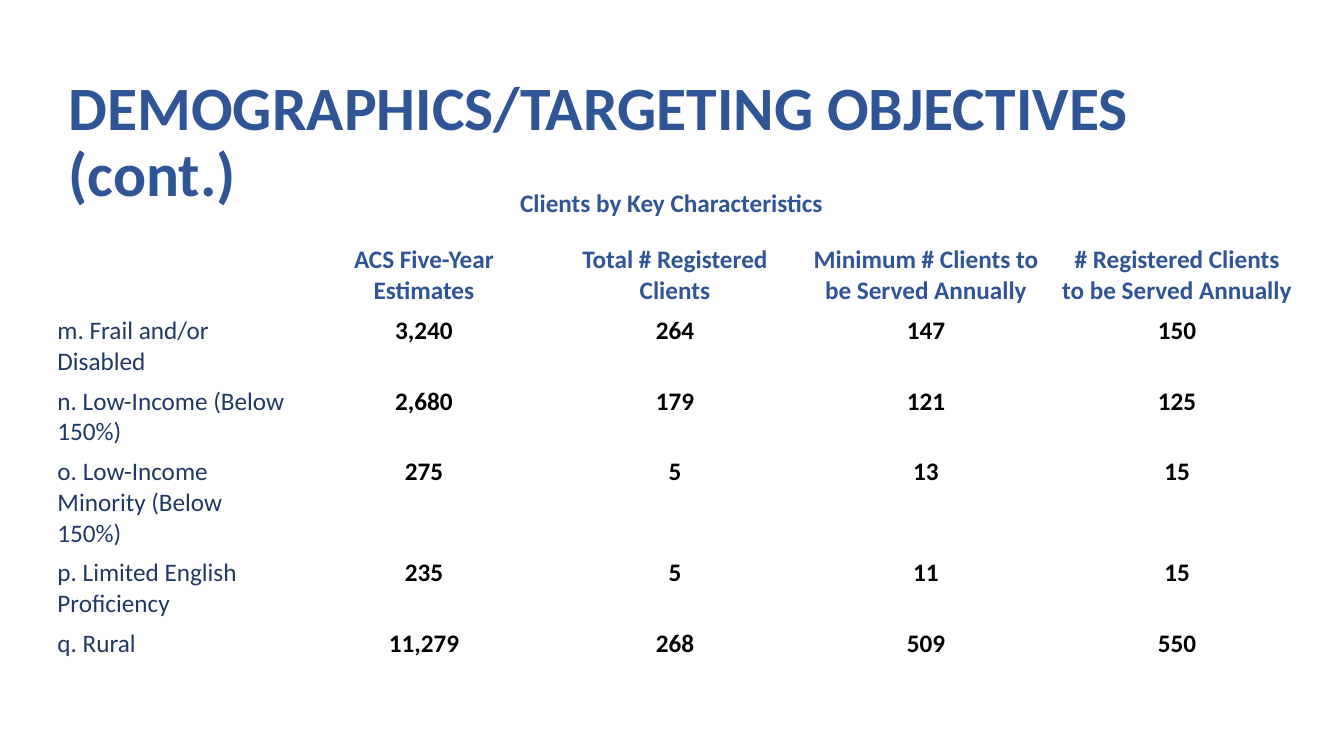
from dataclasses import dataclass

from pptx import Presentation
from pptx.dml.color import RGBColor
from pptx.enum.text import MSO_ANCHOR, MSO_AUTO_SIZE, PP_ALIGN
from pptx.util import Emu, Pt

EMU_PER_PX = 9144  # 100 px to the inch


@dataclass(frozen=True)
class Theme:
    font: str = "Calibri"
    heading: RGBColor = RGBColor(0x2F, 0x55, 0x97)
    label: RGBColor = RGBColor(0x20, 0x38, 0x64)
    value: RGBColor = RGBColor(0, 0, 0)
    title_size: int = 44
    text_size: int = 18


HEADERS = ["", "ACS Five-Year Estimates", "Total # Registered Clients",
           "Minimum # Clients to be Served Annually",
           "# Registered Clients to be Served Annually"]
CLIENT_GROUPS = [
    ["m. Frail and/or Disabled", "3,240", "264", "147", "150"],
    ["n. Low-Income (Below 150%)", "2,680", "179", "121", "125"],
    ["o. Low-Income Minority (Below 150%)", "275", "5", "13", "15"],
    ["p. Limited English Proficiency", "235", "5", "11", "15"],
    ["q. Rural", "11,279", "268", "509", "550"],
]


def px(*lengths):
    return [Emu(length * EMU_PER_PX) for length in lengths]


class SlideBuilder:
    def __init__(self, page, theme):
        self.page = page
        self.theme = theme

    def add_text(self, frame, text, color, size=None, bold=True, align=PP_ALIGN.CENTER):
        para = frame.paragraphs[0]
        para.alignment = align
        span = para.add_run()
        span.text = text
        span.font.name = self.theme.font
        span.font.size = Pt(size or self.theme.text_size)
        span.font.bold = bold
        span.font.color.rgb = color
        return para

    def title(self, text, left, top, width, height):
        box = self.page.shapes.title
        box.left, box.top, box.width, box.height = px(left, top, width, height)
        frame = box.text_frame
        frame.word_wrap = True
        frame.auto_size = MSO_AUTO_SIZE.NONE
        frame.vertical_anchor = MSO_ANCHOR.MIDDLE
        para = self.add_text(frame, text, self.theme.heading,
                             self.theme.title_size, align=PP_ALIGN.LEFT)
        para.line_spacing = 0.9

    def caption(self, text, left, top, width, height):
        box = self.page.shapes.add_textbox(*px(left, top, width, height))
        frame = box.text_frame
        frame.word_wrap = True
        frame.auto_size = MSO_AUTO_SIZE.SHAPE_TO_FIT_TEXT
        self.add_text(frame, text, self.theme.heading)

    def table(self, rows, left, top, column_width, row_height):
        column_count = len(rows[0])
        size = column_width * column_count, row_height * len(rows)
        table = self.page.shapes.add_table(
            len(rows), column_count, *px(left, top, *size)).table
        table.first_row = table.horz_banding = False
        for row_index, row in enumerate(rows):
            for column_index, text in enumerate(row):
                cell = table.cell(row_index, column_index)
                cell.fill.background()
                if not text:
                    continue
                if row_index == 0:
                    self.add_text(cell.text_frame, text, self.theme.heading)
                elif column_index == 0:
                    self.add_text(cell.text_frame, text, self.theme.label,
                                  bold=False, align=PP_ALIGN.LEFT)
                else:
                    self.add_text(cell.text_frame, text, self.theme.value)


def main():
    deck = Presentation()
    deck.slide_width, deck.slide_height = px(1333, 750)
    title_only = deck.slide_layouts.get_by_name("Title Only")
    builder = SlideBuilder(deck.slides.add_slide(title_only), Theme())
    builder.title("DEMOGRAPHICS/TARGETING OBJECTIVES (cont.)", 58, 104, 1245, 77)
    builder.caption("Clients by Key Characteristics", 183, 181, 966, 40)
    builder.table([HEADERS, *CLIENT_GROUPS], 47, 238, 249, 41)
    deck.save("out.pptx")


if __name__ == "__main__":
    main()
